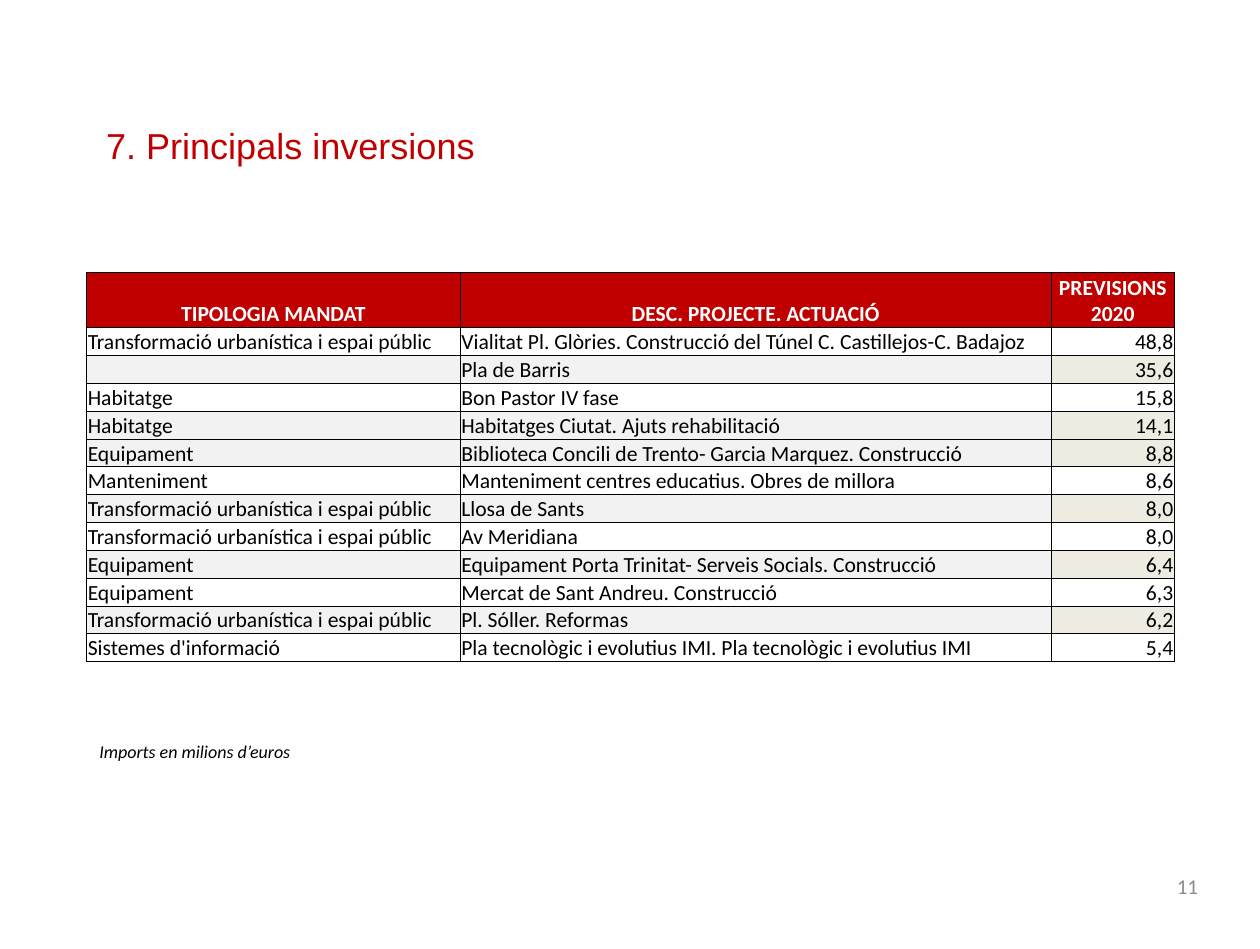
from lxml.etree import SubElement
from pptx import Presentation
from pptx.dml.color import RGBColor
from pptx.enum.text import MSO_ANCHOR as Anchor, PP_ALIGN as Align
from pptx.oxml.ns import qn
from pptx.util import Cm, Pt

COLORS = {
    "red": "C00000",
    "white": "FFFFFF",
    "black": "000000",
    "gray": "8C8C8C",
    "band": "F2F2F2",
    "amount_band": "EEECE1",
}
URBAN = "Transformació urbanística i espai públic"
HEADERS = ["TIPOLOGIA MANDAT", "DESC. PROJECTE. ACTUACIÓ", "PREVISIONS 2020"]
INVESTMENTS = [
    (URBAN, "Vialitat Pl. Glòries. Construcció del Túnel C. Castillejos-C. Badajoz", "48,8"),
    ("", "Pla de Barris", "35,6"),
    ("Habitatge", "Bon Pastor IV fase", "15,8"),
    ("Habitatge", "Habitatges Ciutat. Ajuts rehabilitació", "14,1"),
    ("Equipament", "Biblioteca Concili de Trento- Garcia Marquez. Construcció", "8,8"),
    ("Manteniment", "Manteniment centres educatius. Obres de millora", "8,6"),
    (URBAN, "Llosa de Sants", "8,0"),
    (URBAN, "Av Meridiana", "8,0"),
    ("Equipament", "Equipament Porta Trinitat- Serveis Socials. Construcció", "6,4"),
    ("Equipament", "Mercat de Sant Andreu. Construcció", "6,3"),
    (URBAN, "Pl. Sóller. Reformas", "6,2"),
    ("Sistemes d'informació", "Pla tecnològic i evolutius IMI. Pla tecnològic i evolutius IMI", "5,4"),
]
BANDED_ROWS = {2, 4, 5, 7, 9, 11}
COLUMN_WIDTHS = [7.32, 11.58, 2.41]
HEADER_HEIGHT = 1.09
BODY_HEIGHT = 6.55


class SlideBuilder:
    def __init__(self, page):
        self.page = page

    def style(self, para, size, color, font="Calibri", align=Align.LEFT, bold=False, italic=False):
        para.alignment = align
        para.font.name = font
        para.font.size = Pt(size)
        para.font.bold = bold
        para.font.italic = italic
        para.font.color.rgb = RGBColor.from_string(COLORS[color])

    def text(self, content, left, top, width, height, size, color,
             wrap=True, anchor=Anchor.TOP, **style):
        box = self.page.shapes.add_textbox(Cm(left), Cm(top), Cm(width), Cm(height))
        frame = box.text_frame
        frame.word_wrap = wrap
        frame.vertical_anchor = anchor
        para = frame.paragraphs[0]
        para.text = content
        self.style(para, size, color, **style)

    def border(self, cell):
        properties = cell._tc.get_or_add_tcPr()
        for position, side in enumerate(("lnL", "lnR", "lnT", "lnB")):
            line = SubElement(properties, qn(f"a:{side}"), w=str(Pt(0.5)))
            fill = SubElement(line, qn("a:solidFill"))
            SubElement(fill, qn("a:srgbClr"), val=COLORS["black"])
            properties.insert(position, line)

    def cell(self, cell, content, fill, color, align, bold):
        cell.margin_left = cell.margin_right = cell.margin_top = Cm(0.02)
        cell.margin_bottom = 0
        cell.vertical_anchor = Anchor.BOTTOM
        if fill:
            cell.fill.solid()
            cell.fill.fore_color.rgb = RGBColor.from_string(COLORS[fill])
        else:
            cell.fill.background()
        self.border(cell)
        para = cell.text_frame.paragraphs[0]
        if content:
            para.text = content
        else:
            SubElement(para._p, qn("a:endParaRPr"), sz="1200")
        self.style(para, 12, color, align=align, bold=bold)

    def table(self, rows, left, top):
        body_row = BODY_HEIGHT / (len(rows) - 1)
        frame = self.page.shapes.add_table(
            len(rows), len(COLUMN_WIDTHS), Cm(left), Cm(top),
            Cm(sum(COLUMN_WIDTHS)), Cm(HEADER_HEIGHT + BODY_HEIGHT))
        table = frame.table
        for column, width in zip(table.columns, COLUMN_WIDTHS):
            column.width = Cm(width)
        for index, values in enumerate(rows):
            header = index == 0
            table.rows[index].height = Cm(HEADER_HEIGHT if header else body_row)
            for position, content in enumerate(values):
                amount = position == len(values) - 1
                if header:
                    look = ("red", "white", Align.CENTER, True)
                else:
                    band = "amount_band" if amount else "band"
                    look = (band if index in BANDED_ROWS else None, "black",
                            Align.RIGHT if amount else Align.LEFT, False)
                self.cell(table.cell(index, position), content, *look)


def main():
    deck = Presentation()
    deck.slide_width, deck.slide_height = Cm(24.69), Cm(18.59)
    builder = SlideBuilder(deck.slides.add_slide(deck.slide_layouts[6]))
    builder.text("11", 17.96, 16.87, 5.77, 0.99, 11.7, "gray",
                 anchor=Anchor.MIDDLE, align=Align.RIGHT)
    builder.text("7. Principals inversions", 1.83, 2.29, 19.43, 1.09, 20, "red", font="Arial")
    builder.table([HEADERS, *INVESTMENTS], 1.7, 5.33)
    builder.text("Imports en milions d’euros", 1.7, 14.38, 4.37, 0.69, 10, "black",
                 wrap=False, italic=True)
    deck.save("out.pptx")


if __name__ == "__main__":
    main()
